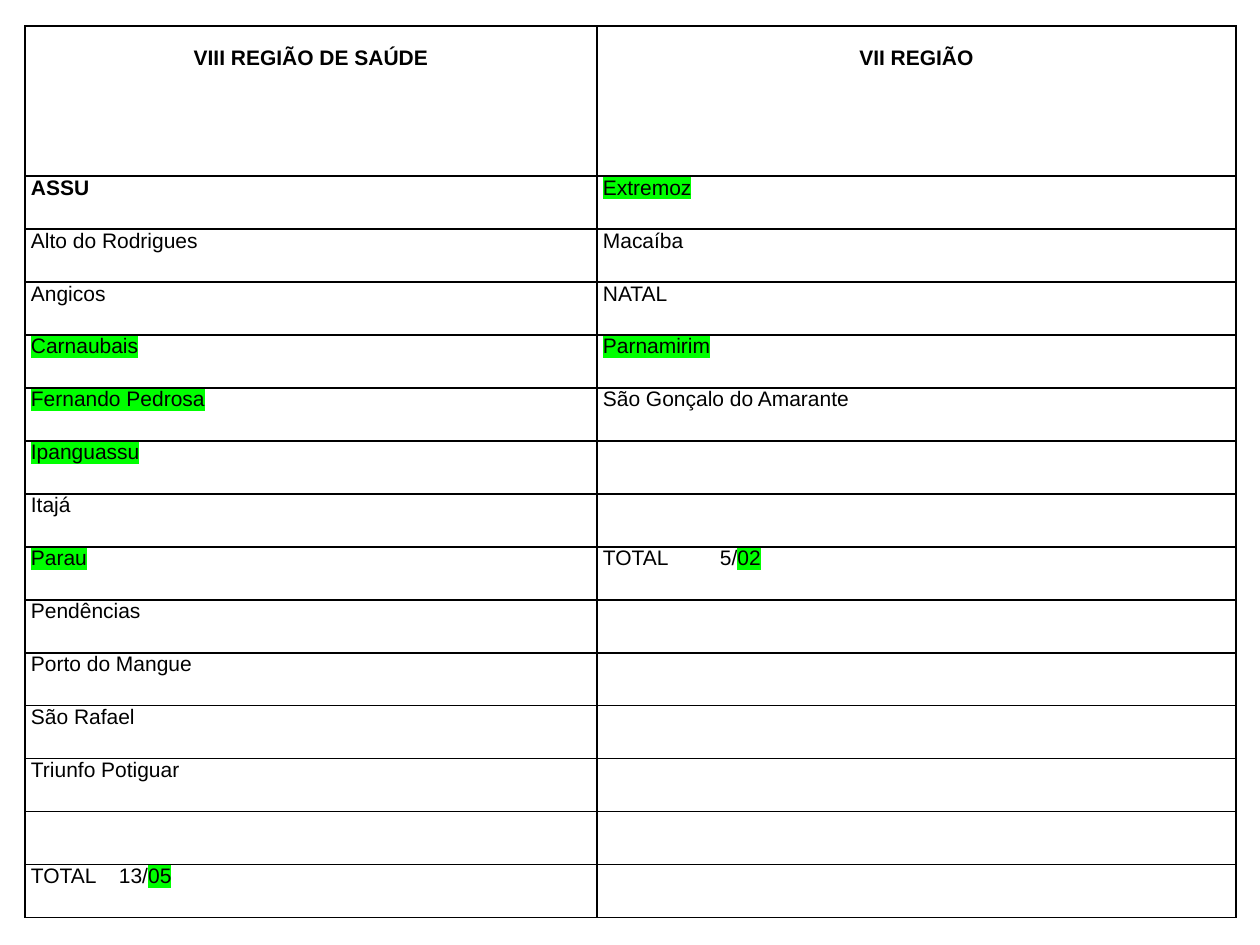
from lxml.etree import SubElement
from pptx import Presentation
from pptx.dml.color import RGBColor
from pptx.enum.text import PP_ALIGN
from pptx.oxml.ns import qn
from pptx.util import Pt

PX = 914400 / 126
COLORS = {"ink": "000000", "mark": "00FF00"}
FONT = "Arial"
COLUMNS = [572, 639]
HEADER_HEIGHT, ROW_HEIGHT = 150, 53
TITLES = ["VIII REGIÃO DE SAÚDE", "VII REGIÃO"]
REGIONS = [
    ["ASSU", "Alto do Rodrigues", "Angicos", "Carnaubais", "Fernando Pedrosa",
     "Ipanguassu", "Itajá", "Parau", "Pendências", "Porto do Mangue",
     "São Rafael", "Triunfo Potiguar", "", ("TOTAL\t13/", "05", 88)],
    ["Extremoz", "Macaíba", "NATAL", "Parnamirim", "São Gonçalo do Amarante",
     "", "", ("TOTAL\t5/", "02", 117)],
]
MARKED = {"Extremoz", "Carnaubais", "Parnamirim", "Fernando Pedrosa",
          "Ipanguassu", "Parau"}
BOLD = {"ASSU", *TITLES}


def px(length):
    return round(length * PX)


def add_span(para, text, marked=False):
    span = para.add_run()
    span.text = text
    span.font.size = Pt(12)
    span.font.bold = text in BOLD
    span.font.color.rgb = RGBColor.from_string(COLORS["ink"])
    if marked:
        highlight = SubElement(span.font._element, qn("a:highlight"))
        SubElement(highlight, qn("a:srgbClr"), val=COLORS["mark"])
    span.font.name = FONT


def add_total(para, label, count, stop):
    tabs = SubElement(para._p.get_or_add_pPr(), qn("a:tabLst"))
    SubElement(tabs, qn("a:tab"), pos=str(px(stop)), algn="l")
    add_span(para, label)
    add_span(para, count, marked=True)


def format_cell(cell):
    cell.margin_left = cell.margin_right = px(6)
    cell.margin_top = cell.margin_bottom = 0
    properties = cell._tc.get_or_add_tcPr()
    for side in ("a:lnL", "a:lnR", "a:lnT", "a:lnB"):
        line = SubElement(properties, qn(side), w=str(Pt(1)))
        fill = SubElement(line, qn("a:solidFill"))
        SubElement(fill, qn("a:srgbClr"), val=COLORS["ink"])
    cell.fill.background()


def add_regions_table(page, left, top):
    row_count = 1 + max(len(names) for names in REGIONS)
    height = HEADER_HEIGHT + (row_count - 1) * ROW_HEIGHT
    frame = page.shapes.add_table(row_count, len(COLUMNS), px(left), px(top),
                                  px(sum(COLUMNS)), px(height))
    table = frame.table
    table.first_row = table.horz_banding = False
    for column, width in zip(table.columns, COLUMNS):
        column.width = px(width)
    for index, row in enumerate(table.rows):
        row.height = px(ROW_HEIGHT if index else HEADER_HEIGHT)
    for cell in table.iter_cells():
        format_cell(cell)

    for column, (title, names) in enumerate(zip(TITLES, REGIONS)):
        header = table.cell(0, column)
        header.margin_top = px(20)
        para = header.text_frame.paragraphs[0]
        para.alignment = PP_ALIGN.CENTER
        add_span(para, title)
        for row, name in enumerate(names, start=1):
            para = table.cell(row, column).text_frame.paragraphs[0]
            if isinstance(name, tuple):
                add_total(para, *name)
            elif name:
                add_span(para, name, name in MARKED)


def main():
    deck = Presentation()
    deck.slide_width, deck.slide_height = px(1260), px(945)
    page = deck.slides.add_slide(deck.slide_layouts[6])
    add_regions_table(page, 25, 26)
    deck.save("out.pptx")


if __name__ == "__main__":
    main()
